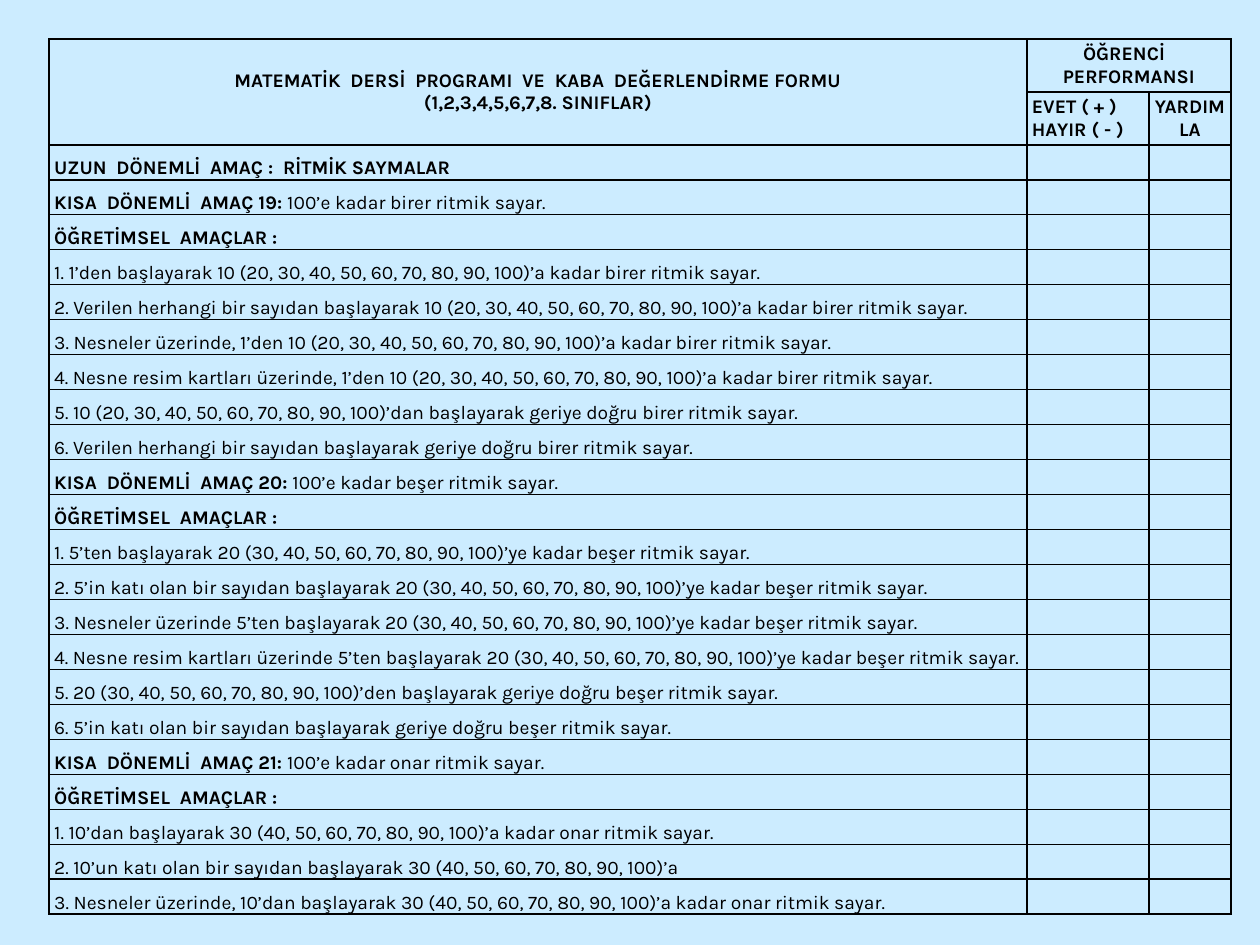
from lxml import etree
from pptx import Presentation
from pptx.dml.color import RGBColor
from pptx.enum.text import MSO_ANCHOR, PP_ALIGN
from pptx.oxml.ns import qn
from pptx.util import Inches, Pt

LEFT, CENTER = PP_ALIGN.LEFT, PP_ALIGN.CENTER
MIDDLE, BOTTOM = MSO_ANCHOR.MIDDLE, MSO_ANCHOR.BOTTOM
COLORS = {"back": "CCECFF", "ink": "000000"}
FONT, SIZE = "Karla", 11
COLS = (7.76, 0.97, 0.65)
HEAD = 0.42


def tens(start):
    """Return a start number with the later tens in brackets."""
    rest = ", ".join(str(n) for n in range(start + 10, 101, 10))
    return f"{start} ({rest})"


GOALS = [
    (19, "birer", [
        f"1’den başlayarak {tens(10)}’a kadar birer ritmik sayar.",
        f"Verilen herhangi bir sayıdan başlayarak {tens(10)}’a kadar birer ritmik sayar.",
        f"Nesneler üzerinde, 1’den {tens(10)}’a kadar birer ritmik sayar.",
        f"Nesne resim kartları üzerinde, 1’den {tens(10)}’a kadar birer ritmik sayar.",
        f"{tens(10)}’dan başlayarak geriye doğru birer ritmik sayar.",
        "Verilen herhangi bir sayıdan başlayarak geriye doğru birer ritmik sayar.",
    ]),
    (20, "beşer", [
        f"5’ten başlayarak {tens(20)}’ye kadar beşer ritmik sayar.",
        f"5’in katı olan bir sayıdan başlayarak {tens(20)}’ye kadar beşer ritmik sayar.",
        f"Nesneler üzerinde 5’ten başlayarak {tens(20)}’ye kadar beşer ritmik sayar.",
        f"Nesne resim kartları üzerinde 5’ten başlayarak {tens(20)}’ye kadar beşer ritmik sayar.",
        f"{tens(20)}’den başlayarak geriye doğru beşer ritmik sayar.",
        "5’in katı olan bir sayıdan başlayarak geriye doğru beşer ritmik sayar.",
    ]),
    (21, "onar", [
        f"10’dan başlayarak {tens(30)}’a kadar onar ritmik sayar.",
        f"10’un katı olan bir sayıdan başlayarak {tens(30)}’a",
        f"Nesneler üzerinde, 10’dan başlayarak {tens(30)}’a kadar onar ritmik sayar.",
    ]),
]


def list_rows():
    """Return each body row as a list of (text, bold) runs."""
    rows = [[("UZUN  DÖNEMLİ  AMAÇ :  RİTMİK SAYMALAR", True)]]
    for num, unit, steps in GOALS:
        rows.append([(f"KISA  DÖNEMLİ  AMAÇ {num}:", True),
                     (f" 100’e kadar {unit} ritmik sayar.", False)])
        rows.append([("ÖĞRETİMSEL  AMAÇLAR :", True)])
        rows += [[(f"{i}. {step}", False)] for i, step in enumerate(steps, 1)]
    return rows


def style_cell(cell):
    """Give a cell its borders, margins, clear fill and empty text size."""
    props = cell._tc.get_or_add_tcPr()
    for side in ("lnL", "lnR", "lnT", "lnB"):
        line = etree.SubElement(props, qn(f"a:{side}"), w=str(Pt(1)))
        fill = etree.SubElement(line, qn("a:solidFill"))
        etree.SubElement(fill, qn("a:srgbClr"), val=COLORS["ink"])
    cell.fill.background()
    cell.margin_left = cell.margin_right = Inches(0.04)
    cell.margin_top = cell.margin_bottom = 0
    para = cell.text_frame.paragraphs[0]._p
    etree.SubElement(para, qn("a:endParaRPr"), sz=str(SIZE * 100))


def write(cell, paras, align=LEFT, anchor=MIDDLE):
    """Fill a cell with paragraphs of (text, bold) runs."""
    cell.vertical_anchor = anchor
    frame = cell.text_frame
    for i, runs in enumerate(paras):
        para = frame.add_paragraph() if i else frame.paragraphs[0]
        para.alignment = align
        for text, bold in runs:
            run = para.add_run()
            run.text = text
            font = run.font
            font.name, font.size, font.bold = FONT, Pt(SIZE), bold
            font.color.rgb = RGBColor.from_string(COLORS["ink"])


def fill_head(table):
    """Merge and fill the two header rows."""
    table.cell(0, 0).merge(table.cell(1, 0))
    table.cell(0, 1).merge(table.cell(0, 2))
    heads = [
        (0, 0, CENTER, ["MATEMATİK  DERSİ  PROGRAMI  VE  KABA  DEĞERLENDİRME FORMU",
                        "(1,2,3,4,5,6,7,8. SINIFLAR)"]),
        (0, 1, CENTER, ["ÖĞRENCİ  ", "PERFORMANSI"]),
        (1, 1, LEFT, ["EVET ( + )", "HAYIR ( - )"]),
        (1, 2, CENTER, ["YARDIMLA"]),
    ]
    for row, col, align, lines in heads:
        write(table.cell(row, col), [[(text, True)] for text in lines], align)


def add_form(slide, left, top, width, height):
    """Place the rating form in the given box."""
    rows = list_rows()
    table = slide.shapes.add_table(len(rows) + 2, len(COLS),
                                   left, top, width, height).table
    table.first_row = table.horz_banding = False
    for col, size in zip(table.columns, COLS):
        col.width = int(width * size / sum(COLS))
    step = (height - 2 * Inches(HEAD)) // len(rows)
    for i, row in enumerate(table.rows):
        row.height = Inches(HEAD) if i < 2 else step
        for cell in row.cells:
            style_cell(cell)
    fill_head(table)
    for i, runs in enumerate(rows, 2):
        write(table.cell(i, 0), [runs], anchor=BOTTOM)


def main():
    """Build and save the slide."""
    deck = Presentation()
    deck.slide_width, deck.slide_height = Inches(10), Inches(7.5)
    slide = deck.slides.add_slide(deck.slide_layouts[6])
    back = slide.background.fill
    back.solid()
    back.fore_color.rgb = RGBColor.from_string(COLORS["back"])
    add_form(slide, Inches(0.39), Inches(0.31), Inches(9.38), Inches(6.95))
    deck.save("out.pptx")


if __name__ == "__main__":
    main()
